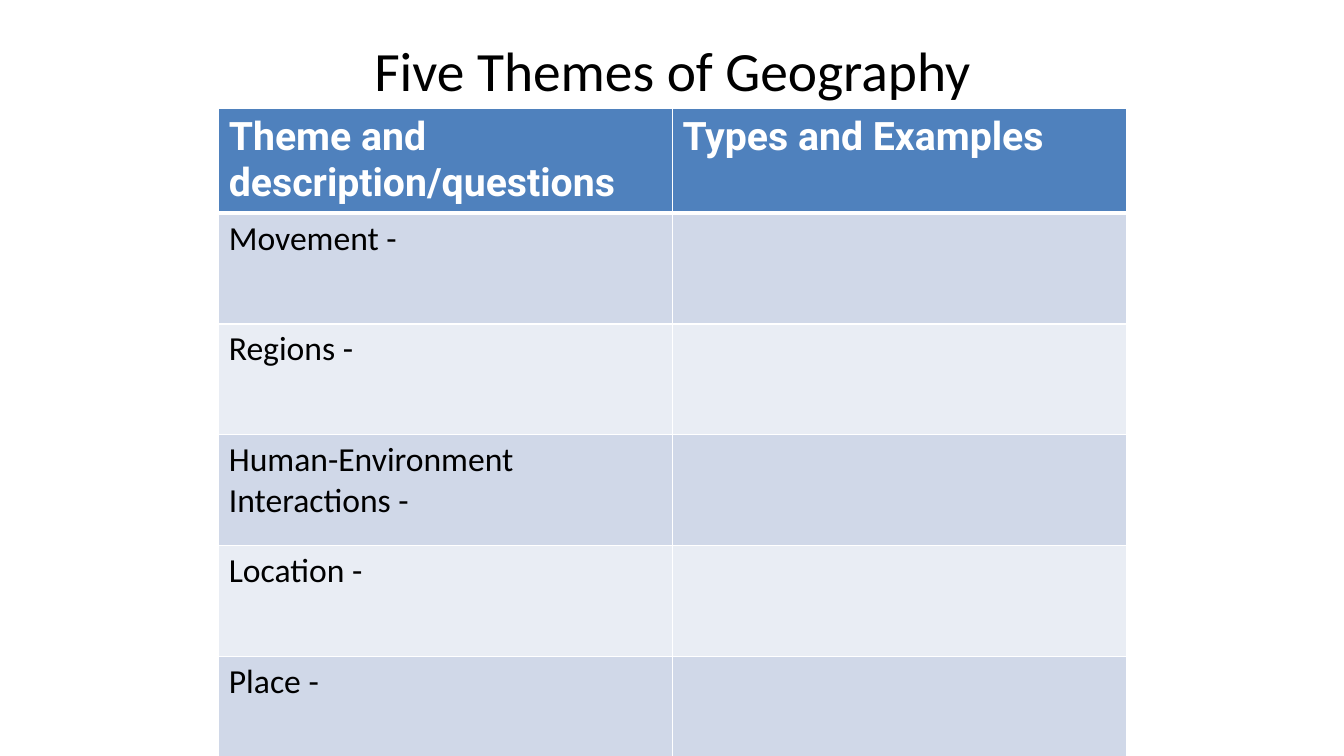
"""Build the Five Themes of Geography slide: a title above a two-column table."""
from dataclasses import dataclass

from lxml.etree import SubElement as Sub
from pptx import Presentation
from pptx.dml.color import RGBColor as RGB
from pptx.enum.text import MSO_ANCHOR as Anchor, PP_ALIGN as Align
from pptx.oxml.ns import qn
from pptx.table import _Cell as Cell
from pptx.text.text import TextFrame
from pptx.util import Inches, Pt

COLORS = {
    "white": "FFFFFF",
    "black": "000000",
    "header": "4F81BD",
    "odd": "D0D8E8",
    "even": "E9EDF4",
}
SLIDE_W, SLIDE_H = 13.33, 7.5
LEFT, TITLE_TOP, TABLE_TOP = 2.17, 0.3, 1.08
COL_W, HEADER_H, ROW_H = 4.5, 0.67, 1.1
THIN, THICK = 1, 3


@dataclass(frozen=True)
class Style:
    """Font settings for a piece of text."""

    font: str
    size: float
    color: str
    bold: bool = False


@dataclass(frozen=True)
class Row:
    """One table row with its look and border widths in points."""

    texts: tuple[str, str]
    style: Style
    fill: str
    height: float = ROW_H
    top: int = THIN
    bottom: int = THIN


TITLE = Style("Calibri", 39.6, "black")
HEADER = Style("Roboto", 28, "white", True)
BODY = Style("Calibri", 24, "black")
THEMES = ("Movement -", "Regions -", "Human-Environment Interactions -",
          "Location -", "Place -")
ROWS = [
    Row(("Theme and description/questions", "Types and Examples"),
        HEADER, "header", HEADER_H, bottom=THICK),
    *(Row((theme, ""), BODY, "even" if i % 2 else "odd",
          top=THIN if i else THICK)
      for i, theme in enumerate(THEMES)),
]


def write(tf: TextFrame, text: str, style: Style) -> None:
    """Set the text and format its runs."""
    tf.text = text
    for r in tf.paragraphs[0].runs:
        r.font.name = style.font
        r.font.size = Pt(style.size)
        r.font.bold = style.bold
        r.font.color.rgb = RGB.from_string(COLORS[style.color])


def add_borders(cell: Cell, row: Row) -> None:
    """Draw white lines on the four sides of a cell."""
    tc_pr = cell._tc.get_or_add_tcPr()
    sides = {"lnL": THIN, "lnR": THIN, "lnT": row.top, "lnB": row.bottom}
    for tag, width in sides.items():
        ln = Sub(tc_pr, qn(f"a:{tag}"), w=str(Pt(width)))
        Sub(Sub(ln, qn("a:solidFill")), qn("a:srgbClr"), val=COLORS["white"])


def fill_cell(cell: Cell, text: str, row: Row) -> None:
    """Give a cell its borders, fill and text."""
    add_borders(cell, row)
    cell.fill.solid()
    cell.fill.fore_color.rgb = RGB.from_string(COLORS[row.fill])
    write(cell.text_frame, text, row.style)


def main() -> None:
    """Create and save the slide."""
    prs = Presentation()
    prs.slide_width, prs.slide_height = Inches(SLIDE_W), Inches(SLIDE_H)
    s = prs.slides.add_slide(prs.slide_layouts[6])
    n_cols = len(ROWS[0].texts)
    left, width = Inches(LEFT), Inches(n_cols * COL_W)

    sp = s.shapes.add_textbox(left, Inches(TITLE_TOP), width,
                              Inches(TABLE_TOP - TITLE_TOP))
    tf = sp.text_frame
    tf.word_wrap = True
    tf.vertical_anchor = Anchor.MIDDLE
    write(tf, "Five Themes of Geography", TITLE)
    tf.paragraphs[0].alignment = Align.CENTER

    height = Inches(sum(row.height for row in ROWS))
    table = s.shapes.add_table(len(ROWS), n_cols, left, Inches(TABLE_TOP),
                               width, height).table
    for i, row in enumerate(ROWS):
        table.rows[i].height = Inches(row.height)
        for j, text in enumerate(row.texts):
            fill_cell(table.cell(i, j), text, row)

    prs.save("out.pptx")


if __name__ == "__main__":
    main()
